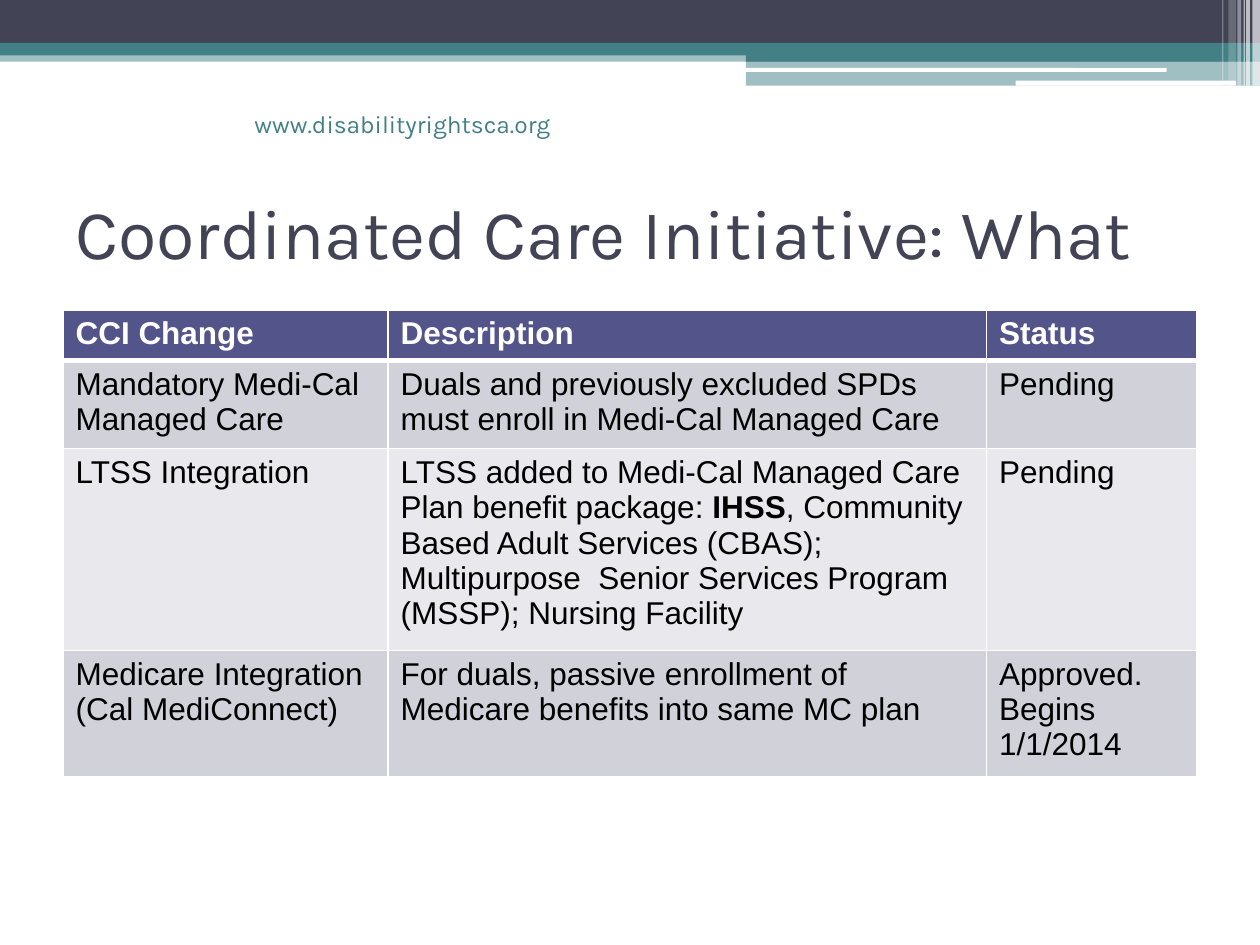
"""Build the care initiative slide with its banner, title and status table."""
from dataclasses import dataclass

from lxml.etree import SubElement
from pptx import Presentation
from pptx.dml.color import RGBColor
from pptx.enum.shapes import MSO_SHAPE
from pptx.enum.text import MSO_ANCHOR, MSO_AUTO_SIZE, PP_ALIGN
from pptx.oxml import parse_xml
from pptx.oxml.ns import nsdecls, qn
from pptx.slide import Slide
from pptx.table import _Cell
from pptx.util import Inches, Pt


@dataclass(frozen=True)
class Theme:
    """Colours, fonts and type sizes."""
    navy: str = "424456"
    teal: str = "438086"
    white: str = "FFFFFF"
    black: str = "000000"
    head: str = "53548A"
    odd: str = "D1D1DA"
    even: str = "E9E9ED"
    face: str = "Karla"
    body: str = "Arial"
    title: int = 40
    link: int = 14
    cell: int = 18


@dataclass(frozen=True)
class Bar:
    """One banner bar, with opacity in percent."""
    left: float
    top: float
    width: float
    height: float
    color: str
    alpha: int = 100
    round: bool = False


@dataclass(frozen=True)
class Row:
    """One table row; each cell is a tuple of runs, odd runs bold."""
    height: float
    fill: str
    cells: tuple[tuple[str, ...], ...]


THEME = Theme()
BARS = (
    Bar(0, 0.4, 10, 0.09, THEME.teal, 50),
    Bar(0, 0, 10, 0.34, THEME.navy),
    Bar(0, 0.34, 10, 0.1, THEME.teal),
    Bar(5.92, 0.39, 4.08, 0.1, THEME.teal),
    Bar(5.92, 0.48, 4.08, 0.2, THEME.teal, 50),
    Bar(5.91, 0.54, 3.35, 0.03, THEME.white, round=True),
    Bar(8.06, 0.64, 1.75, 0.04, THEME.white, round=True),
    Bar(9.94, 0, 0.06, 0.68, THEME.white, 65),
    Bar(9.89, 0, 0.03, 0.68, THEME.white, 65),
    Bar(9.87, 0, 0.01, 0.68, THEME.white, 60),
    Bar(9.82, 0, 0.03, 0.68, THEME.white, 40),
    Bar(9.75, 0, 0.06, 0.64, THEME.white, 20),
    Bar(9.7, 0, 0.01, 0.64, THEME.white, 30),
)
WIDTHS = (2.58, 4.75, 1.67)
ROWS = (
    Row(0.4, THEME.head, (("CCI Change",), ("Description",), ("Status",))),
    Row(0.66, THEME.odd, (
        ("Mandatory Medi-Cal Managed Care",),
        ("Duals and previously excluded SPDs must enroll in Medi-Cal Managed Care",),
        ("Pending",))),
    Row(1.5, THEME.even, (
        ("LTSS Integration",),
        ("LTSS added to Medi-Cal Managed Care Plan benefit package: ", "IHSS",
         ", Community Based Adult Services (CBAS); Multipurpose  Senior Services "
         "Program (MSSP); Nursing Facility"),
        ("Pending",))),
    Row(0.94, THEME.odd, (
        ("Medicare Integration (Cal MediConnect)",),
        ("For duals, passive enrollment of Medicare benefits into same MC plan",),
        ("Approved. Begins 1/1/2014",))),
)


def apply(item: object, values: dict) -> None:
    """Set each named attribute of an item."""
    for name, value in values.items():
        setattr(item, name, value)


def write(para, text: str, face: str, size: int, color: str, bold: bool = False) -> None:
    """Add a formatted run to a paragraph."""
    run = para.add_run()
    run.text = text
    apply(run.font, {"name": face, "size": Pt(size), "bold": bold})
    run.font.color.rgb = RGBColor.from_string(color)


def draw_bar(slide: Slide, bar: Bar) -> None:
    """Draw one borderless bar."""
    kind = MSO_SHAPE.ROUNDED_RECTANGLE if bar.round else MSO_SHAPE.RECTANGLE
    shape = slide.shapes.add_shape(
        kind, *map(Inches, (bar.left, bar.top, bar.width, bar.height)))
    shape.shadow.inherit = False
    shape.line.fill.background()
    shape.fill.solid()
    shape.fill.fore_color.rgb = RGBColor.from_string(bar.color)
    if bar.alpha < 100:
        color = shape.element.spPr.find(qn("a:solidFill"))[0]
        SubElement(color, qn("a:alpha"), val=str(bar.alpha * 1000))


def draw_link(slide: Slide) -> None:
    """Add the web address under the banner."""
    box = slide.shapes.add_textbox(*map(Inches, (1.92, 0.58, 3.83, 0.57)))
    apply(box.text_frame, {"word_wrap": True, "vertical_anchor": MSO_ANCHOR.BOTTOM})
    write(box.text_frame.paragraphs[0], "www.disabilityrightsca.org",
          THEME.face, THEME.link, THEME.teal)


def draw_title(slide: Slide) -> None:
    """Place and fill the title."""
    title = slide.shapes.title
    apply(title, {"left": Inches(0.5), "top": Inches(1.25),
                  "width": Inches(9), "height": Inches(1.17)})
    apply(title.text_frame, {"word_wrap": True, "auto_size": MSO_AUTO_SIZE.NONE,
                             "vertical_anchor": MSO_ANCHOR.MIDDLE})
    para = title.text_frame.paragraphs[0]
    para.alignment = PP_ALIGN.LEFT
    write(para, "Coordinated Care Initiative: What", THEME.face, THEME.title, THEME.navy)


def edge_cell(cell: _Cell, top: int, base: int) -> None:
    """Give a cell white borders, with top and base widths in points."""
    props = cell._tc.get_or_add_tcPr()
    for spot, (side, width) in enumerate((("L", 1), ("R", 1), ("T", top), ("B", base))):
        props.insert(spot, parse_xml(
            f'<a:ln{side} {nsdecls("a")} w="{Pt(width)}"><a:solidFill>'
            f'<a:srgbClr val="{THEME.white}"/></a:solidFill></a:ln{side}>'))


def draw_table(slide: Slide) -> None:
    """Draw the table of changes."""
    high = sum(row.height for row in ROWS)
    table = slide.shapes.add_table(
        len(ROWS), len(WIDTHS), *map(Inches, (0.5, 2.46, sum(WIDTHS), high))).table
    for column, width in zip(table.columns, WIDTHS):
        column.width = Inches(width)
    for index, row in enumerate(ROWS):
        table.rows[index].height = Inches(row.height)
        head = index == 0
        for cell, runs in zip(table.rows[index].cells, row.cells):
            cell.fill.solid()
            cell.fill.fore_color.rgb = RGBColor.from_string(row.fill)
            edge_cell(cell, 3 if index == 1 else 1, 3 if head else 1)
            for order, text in enumerate(runs):
                write(cell.text_frame.paragraphs[0], text, THEME.body, THEME.cell,
                      THEME.white if head else THEME.black, head or order % 2 == 1)


def main() -> None:
    """Build and save the deck."""
    deck = Presentation()
    apply(deck, {"slide_width": Inches(10), "slide_height": Inches(7.5)})
    slide = deck.slides.add_slide(deck.slide_layouts[5])
    for bar in BARS:
        draw_bar(slide, bar)
    draw_link(slide)
    draw_title(slide)
    draw_table(slide)
    deck.save("out.pptx")


if __name__ == "__main__":
    main()
